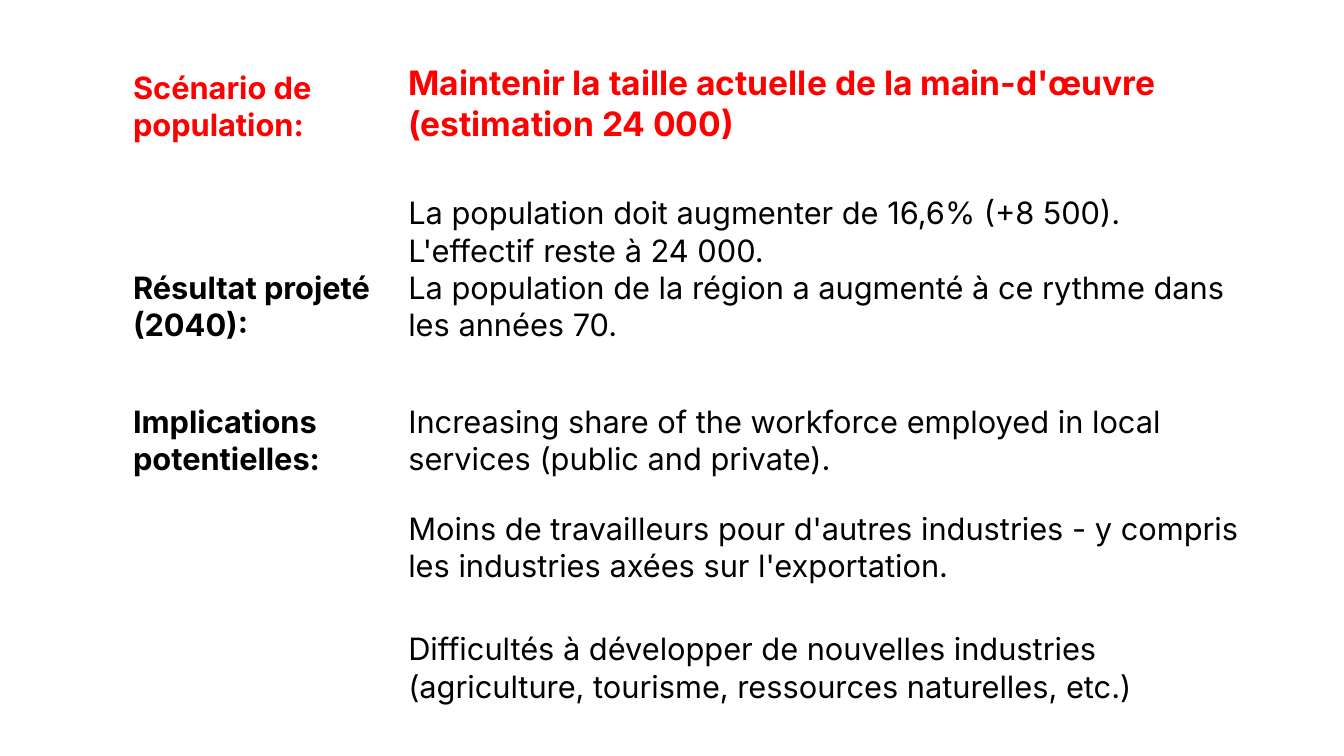
from pptx import Presentation
from pptx.dml.color import RGBColor
from pptx.enum.text import MSO_ANCHOR
from pptx.util import Inches, Pt
from lxml.etree import SubElement
from pptx.oxml.ns import qn

THEME = {
    "font": "Inter",
    "red": RGBColor(0xFF, 0, 0),
    "black": RGBColor(0, 0, 0),
    "rule": "FFFFFF",
    "body": Pt(22),
    "head": Pt(24),
}
WIDE, HIGH = Inches(13.33), Inches(7.5)

# Table box, columns and rows in inches
BOX = (1.31, 0.33, 11.34, 6.67)
COLS = (2.73, 8.61)
ROWS = (1.1, 1.98, 1.33, 1.06, 1.2)

# Each row: label, then the lines beside it
TEXT = [
    ("Scénario de population:",
     ["Maintenir la taille actuelle de la main-d'œuvre (estimation 24 000)"]),
    ("Résultat projeté (2040):",
     ["La population doit augmenter de 16,6% (+8 500).",
      "L'effectif reste à 24 000.",
      "La population de la région a augmenté à ce rythme dans les années 70."]),
    ("Implications potentielles:",
     ["Increasing share of the workforce employed in local services "
      "(public and private)."]),
    ("",
     ["Moins de travailleurs pour d'autres industries - y compris "
      "les industries axées sur l'exportation."]),
    ("",
     ["Difficultés à développer de nouvelles industries "
      "(agriculture, tourisme, ressources naturelles, etc.)"]),
]


def set_all(item, values):
    for name, value in values.items():
        setattr(item, name, value)


def rule_cell(cell):
    """White rules on all four sides, no fill."""
    props = cell._tc.get_or_add_tcPr()
    for side in ("lnL", "lnR", "lnT", "lnB"):
        line = SubElement(props, qn(f"a:{side}"), w=str(Pt(1)))
        fill = SubElement(line, qn("a:solidFill"))
        SubElement(fill, qn("a:srgbClr"), val=THEME["rule"])
    cell.fill.background()


def fill_cell(cell, lines, size, color, bold):
    set_all(cell, {
        "vertical_anchor": MSO_ANCHOR.BOTTOM,
        "margin_left": Inches(0.01),
        "margin_right": Inches(0.01),
        "margin_top": Inches(0.01),
        "margin_bottom": 0,
    })
    rule_cell(cell)
    frame = cell.text_frame
    frame.text = "\n".join(lines)
    for para in frame.paragraphs:
        set_all(para.font, {"name": THEME["font"], "size": size, "bold": bold})
        para.font.color.rgb = color
        for run in para.runs:
            set_all(run.font, {"name": THEME["font"], "size": size, "bold": bold})
            run.font.color.rgb = color


def add_grid(slide, box):
    left, top, width, height = map(Inches, box)
    table = slide.shapes.add_table(
        len(ROWS), len(COLS), left, top, width, height).table
    set_all(table, {"first_row": False, "horz_banding": False})

    # Share the box out among columns and rows
    for col, part in zip(table.columns, COLS):
        col.width = int(width * part / sum(COLS))
    for row, part in zip(table.rows, ROWS):
        row.height = int(height * part / sum(ROWS))

    for num, (label, lines) in enumerate(TEXT):
        top_row = num == 0
        color = THEME["red" if top_row else "black"]
        # The first label is followed by an open line in the third row
        tags = [label, ""] if num == 2 else [label]
        if num == 2:
            tags = [label]
        fill_cell(table.cell(num, 0), tags, THEME["body"], color, True)
        size = THEME["head" if top_row else "body"]
        fill_cell(table.cell(num, 1), lines, size, color, top_row)


def main():
    deck = Presentation()
    set_all(deck, {"slide_width": WIDE, "slide_height": HIGH})
    slide = deck.slides.add_slide(deck.slide_layouts[6])
    add_grid(slide, BOX)
    deck.save("out.pptx")


if __name__ == "__main__":
    main()
